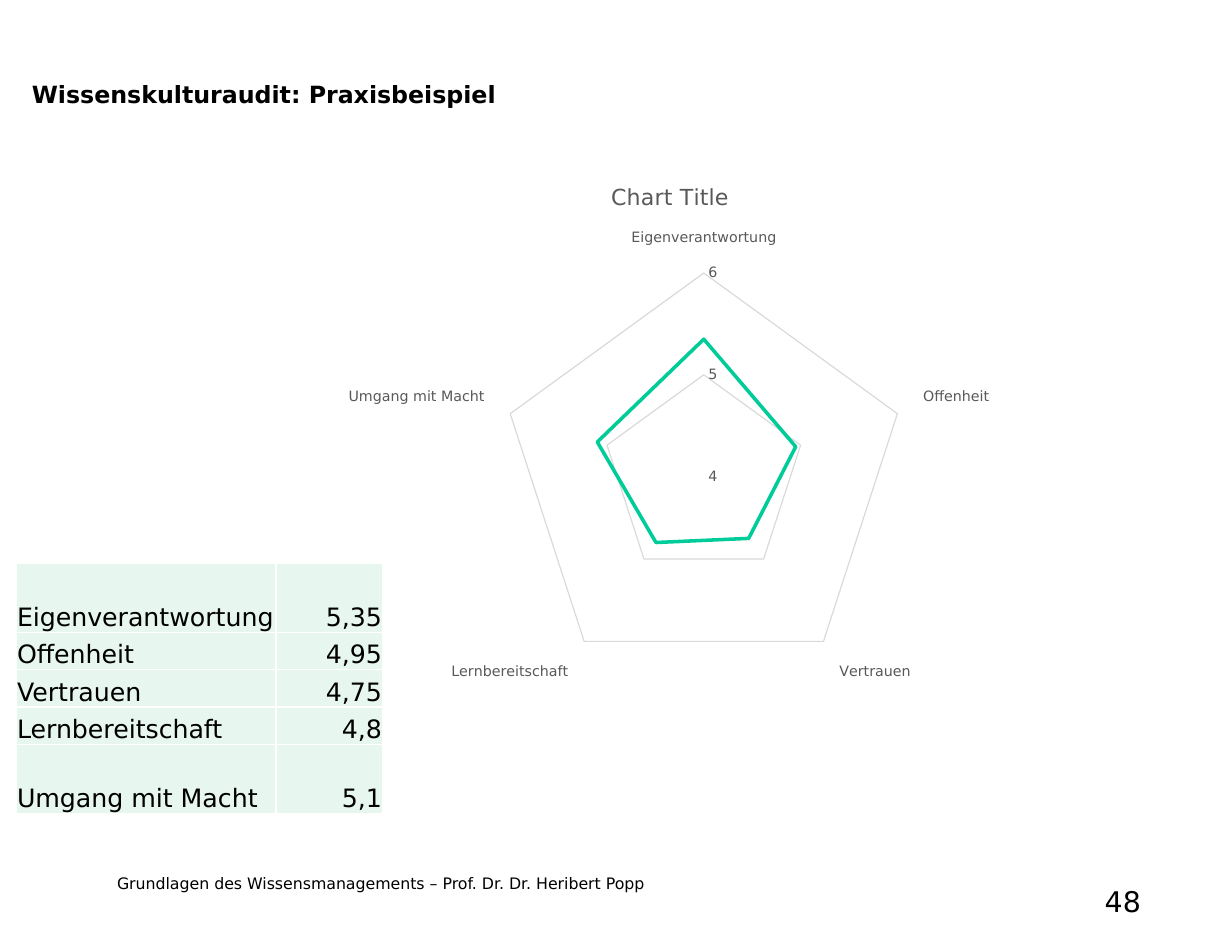
import pptx
import pptx.chart.data
import pptx.dml.color
import pptx.enum.chart
import pptx.enum.text
import pptx.oxml
import pptx.util
from lxml import etree

FONT = "DejaVu Sans"
INK, GREY, GRID, GREEN, MINT, WHITE = "000000", "595959", "D9D9D9", "00CC99", "E7F6EF", "FFFFFF"
DRAWING = "http://schemas.openxmlformats.org/drawingml/2006/main"
ALIGN = pptx.enum.text.PP_ALIGN
ANCHOR = pptx.enum.text.MSO_ANCHOR
AUDIT = {
    "Eigenverantwortung": 5.35,
    "Offenheit": 4.95,
    "Vertrauen": 4.75,
    "Lernbereitschaft": 4.8,
    "Umgang mit Macht": 5.1,
}
ROW_WEIGHTS = (61, 33, 33, 33, 61)
COLUMN_WEIGHTS = (228, 94)


def set_all(target, values):
    for name, value in values.items():
        setattr(target, name, value)


def paint(color_format, hex_color):
    color_format.rgb = pptx.dml.color.RGBColor.from_string(hex_color)


def style_font(font, size, color=INK, bold=False):
    set_all(font, {"name": FONT, "size": pptx.util.Pt(size), "bold": bold})
    paint(font.color, color)


def style_line(line, color, width):
    paint(line.color, color)
    line.width = pptx.util.Pt(width)


def grid_box(deck, left, top, width, height):
    """Turn cells of a 100 by 100 slide grid into slide lengths."""
    column, row = deck.slide_width / 100, deck.slide_height / 100
    return [round(length) for length in (left * column, top * row, width * column, height * row)]


def write(frame, text, size, align=ALIGN.LEFT, bold=False):
    para = frame.paragraphs[0]
    para.alignment = align
    span = para.add_run()
    span.text = text
    style_font(span.font, size, bold=bold)


def add_label(page, box, text, size, align=ALIGN.LEFT, bold=False, **frame_values):
    frame = page.shapes.add_textbox(*box).text_frame
    set_all(frame, {"word_wrap": True, **frame_values})
    write(frame, text, size, align, bold)


def add_cell_borders(cell):
    properties = cell._tc.get_or_add_tcPr()
    for position, side in enumerate(("lnL", "lnR", "lnT", "lnB")):
        properties.insert(position, pptx.oxml.parse_xml(
            f'<a:{side} xmlns:a="{DRAWING}" w="12700"><a:solidFill>'
            f'<a:srgbClr val="{WHITE}"/></a:solidFill></a:{side}>'))


def add_audit_table(page, box):
    width, height = box[2:]
    table = page.shapes.add_table(len(AUDIT), 2, *box).table
    set_all(table, {"first_row": False, "horz_banding": False})
    for column, weight in zip(table.columns, COLUMN_WEIGHTS):
        column.width = round(width * weight / sum(COLUMN_WEIGHTS))
    for row, weight in zip(table.rows, ROW_WEIGHTS):
        row.height = round(height * weight / sum(ROW_WEIGHTS))
    inset = pptx.util.Inches(0.01)
    for row, (topic, score) in zip(table.rows, AUDIT.items()):
        texts = (topic, str(score).replace(".", ","))
        for cell, text, align in zip(row.cells, texts, (ALIGN.LEFT, ALIGN.RIGHT)):
            set_all(cell, {"margin_left": inset, "margin_right": inset, "margin_top": inset,
                           "margin_bottom": 0, "vertical_anchor": ANCHOR.BOTTOM})
            cell.fill.solid()
            paint(cell.fill.fore_color, MINT)
            add_cell_borders(cell)
            write(cell.text_frame, text, 16, align)


def place_plot(chart, shares):
    """Fix the inner plot area at shares of the chart box."""
    plot_area = chart._chartSpace.chart.plotArea
    space = etree.QName(plot_area).namespace
    for old in plot_area.findall(f"{{{space}}}layout"):
        plot_area.remove(old)
    settings = {"layoutTarget": "inner", "xMode": "edge", "yMode": "edge", **shares}
    children = "".join(f'<c:{name} val="{value}"/>' for name, value in settings.items())
    plot_area.insert(0, pptx.oxml.parse_xml(
        f'<c:layout xmlns:c="{space}"><c:manualLayout>{children}</c:manualLayout></c:layout>'))


def add_audit_radar(page, box):
    data = pptx.chart.data.CategoryChartData(number_format="General")
    data.categories = list(AUDIT)
    data.add_series("Series 1", list(AUDIT.values()))
    chart = page.shapes.add_chart(pptx.enum.chart.XL_CHART_TYPE.RADAR, *box, data).chart
    style_font(chart.font, 10)
    set_all(chart, {"has_legend": False, "has_title": True})
    title = chart.chart_title.text_frame
    title.text = "Chart Title"
    style_font(title.paragraphs[0].runs[0].font, 14, GREY)
    place_plot(chart, {"x": 0.27, "y": 0.21, "w": 0.55, "h": 0.76})

    no_tick = pptx.enum.chart.XL_TICK_MARK.NONE
    for axis in (chart.category_axis, chart.value_axis):
        set_all(axis, {"major_tick_mark": no_tick, "minor_tick_mark": no_tick,
                       "has_major_gridlines": True})
        style_font(axis.tick_labels.font, 9, GREY)
        style_line(axis.major_gridlines.format.line, GRID, 0.75)
    style_line(chart.category_axis.format.line, GRID, 0.75)
    set_all(chart.value_axis, {"minimum_scale": 4, "maximum_scale": 6, "major_unit": 1})
    set_all(chart.value_axis.tick_labels, {"number_format": "0", "number_format_is_linked": False})
    chart.value_axis.format.line.fill.background()

    chart.plots[0].vary_by_categories = False
    series = chart.plots[0].series[0]
    series.smooth = False
    series.marker.style = pptx.enum.chart.XL_MARKER_STYLE.NONE
    style_line(series.format.line, GREEN, 2.25)


def main():
    deck = pptx.Presentation()
    set_all(deck, {"slide_width": pptx.util.Inches(10.83), "slide_height": pptx.util.Inches(8.33)})
    page = deck.slides.add_slide(deck.slide_layouts[6])
    add_label(page, grid_box(deck, 8.59, 91.6, 60.3, 3.24),
              "Grundlagen des Wissensmanagements – Prof. Dr. Dr. Heribert Popp", 10)
    add_label(page, grid_box(deck, 2.59, 6.96, 85.87, 6), "Wissenskulturaudit: Praxisbeispiel",
              15, bold=True, margin_left=0, vertical_anchor=ANCHOR.MIDDLE)
    add_label(page, grid_box(deck, 84.21, 92.68, 13.85, 2.04), "48", 18, ALIGN.CENTER)
    add_audit_radar(page, grid_box(deck, 23.82, 16.93, 61.13, 56.54))
    add_audit_table(page, grid_box(deck, 1.29, 59.42, 29.8, 26.4))
    deck.save("out.pptx")


if __name__ == "__main__":
    main()
